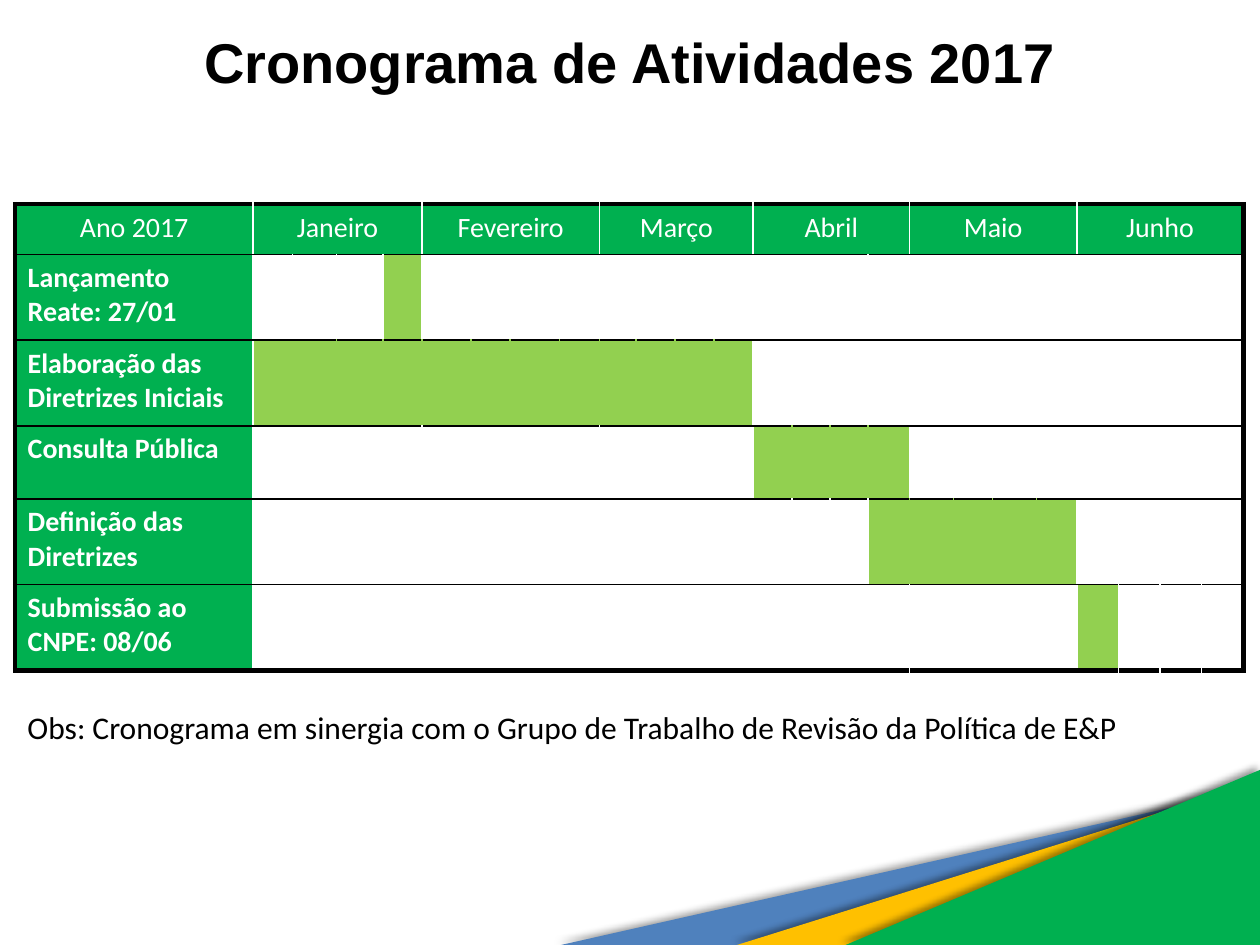
from lxml import etree
from pptx import Presentation
from pptx import util as u
from pptx.dml.color import RGBColor
from pptx.enum import shapes, text
from pptx.oxml.ns import qn

GREEN = RGBColor(0x00, 0xB0, 0x50)
LIME = RGBColor(0x92, 0xD0, 0x50)
BLUE = RGBColor(0x4F, 0x81, 0xBD)
GOLD = RGBColor(0xFF, 0xC0, 0x00)
BLACK = RGBColor(0, 0, 0)
WHITE = RGBColor(0xFF, 0xFF, 0xFF)

UNIT = 0.1  # inches per grid step: 100 columns by 75 rows
WEEKS = 4
LAST = 24
MONTHS = ["Janeiro", "Fevereiro", "Março", "Abril", "Maio", "Junho"]
# label, first and last week of the bar
TASKS = [
    ("Lançamento Reate: 27/01", 4, 4),
    ("Elaboração das Diretrizes Iniciais", 1, 12),
    ("Consulta Pública", 13, 16),
    ("Definição das Diretrizes", 16, 20),
    ("Submissão ao CNPE: 08/06", 21, 21),
]
# (row, first week): weeks joined where the month is not one whole cell
JOINS = {(1, 13): 3, (2, 1): 2, (2, 13): 3, (5, 13): 3}
COLS = [18.9, 3.1, 3.5, 3.7, 3.1, 3.9, 3.1, 3.9, 3.2, 2.9, 3.1, 3.1, 3.1,
        3.1, 3, 3, 3.3, 3.5, 3.1, 3.5, 3.2, 3.3, 3.3, 3.3, 3.3]
ROWS = [4, 6.8, 6.8, 5.8, 6.8, 6.8]


def grid(n):
    return u.Inches(n * UNIT)


class Deck:
    base = dict(name="Calibri", size=u.Pt(16), bold=False)

    def __init__(self):
        self.prs = Presentation()
        self.prs.slide_width, self.prs.slide_height = grid(100), grid(75)
        self.slide = self.prs.slides.add_slide(self.prs.slide_layouts[6])

    def put(self, frame, words, color, align=text.PP_ALIGN.LEFT, **style):
        para = frame.paragraphs[0]
        para.alignment = align
        run = para.add_run()
        run.text = words
        for key, val in {**self.base, **style}.items():
            setattr(run.font, key, val)
        run.font.color.rgb = color

    def label(self, box, words, anchor=text.MSO_ANCHOR.TOP, **style):
        frame = self.slide.shapes.add_textbox(*map(grid, box)).text_frame
        frame.word_wrap = True
        frame.vertical_anchor = anchor
        self.put(frame, words, BLACK, **style)

    def wedge(self, left, top, color):
        """Right triangle reaching the bottom right corner, with soft shadow."""
        box = map(grid, (left, top, 100 - left, 75 - top))
        shape = self.slide.shapes.add_shape(
            shapes.MSO_SHAPE.RIGHT_TRIANGLE, *box)
        shape.rotation = 180
        shape.fill.solid()
        shape.fill.fore_color.rgb = color
        shape.line.fill.background()
        shape.shadow.inherit = False
        props = shape._element.spPr
        props.find(qn("a:xfrm")).set("flipV", "1")
        shade = etree.SubElement(
            props.find(qn("a:effectLst")), qn("a:outerShdw"),
            blurRad=str(u.Pt(4)), dist=str(u.Pt(3)), dir=str(225 * 60000),
            algn="br", rotWithShape="0")
        tint = etree.SubElement(shade, qn("a:srgbClr"), val=str(BLACK))
        etree.SubElement(tint, qn("a:alpha"), val="40000")

    def edges(self, cell, lines):
        """Borders as side: (colour, points), in order L, R, T, B."""
        props = cell._tc.get_or_add_tcPr()
        for i, (side, (color, width)) in enumerate(lines.items()):
            line = etree.Element(qn("a:ln" + side), w=str(u.Pt(width)))
            fill = etree.SubElement(line, qn("a:solidFill"))
            etree.SubElement(fill, qn("a:srgbClr"), val=str(color))
            props.insert(i, line)

    def table(self, left, top):
        size = (left, top, sum(COLS), sum(ROWS))
        table = self.slide.shapes.add_table(
            len(ROWS), len(COLS), *map(grid, size)).table
        table.first_row = table.horz_banding = False
        for col, width in zip(table.columns, COLS):
            col.width = grid(width)
        for row, height in zip(table.rows, ROWS):
            row.height = grid(height)
        return table

    def paint(self, cell, color):
        if color is None:
            cell.fill.background()
        else:
            cell.fill.solid()
            cell.fill.fore_color.rgb = color


def ends(row, bar):
    """Last column of the merged cell that starts at each column."""
    last = {c: c for c in range(LAST + 1)}
    for first in range(1, LAST, WEEKS):
        busy = any(c in bar for c in range(first, first + WEEKS))
        count = JOINS.get((row, first), 1 if busy else WEEKS)
        last[first] = first + count - 1
    return last


def plan(deck):
    table = deck.table(1.2, 16.2)
    bars = [range(0)] + [range(a, b + 1) for _, a, b in TASKS]
    thick, thin, plain, inner = (BLACK, 3), (BLACK, 1), (WHITE, 1), (LIME, 1)
    for r, bar in enumerate(bars):
        for c, end in ends(r, bar).items():
            cell = table.cell(r, c)
            if end > c:
                cell.merge(table.cell(r, end))
            # frame, bar seams and grid lines
            deck.edges(cell, {
                "L": thick if c == 0 else
                inner if c in bar and c - 1 in bar else plain,
                "R": thick if end == LAST else
                inner if end in bar and end + 1 in bar else plain,
                "T": thick if r == 0 else thin,
                "B": thick if r == len(TASKS) else thin,
            })
            head = r == 0 or c == 0
            deck.paint(cell, GREEN if head else LIME if c in bar else None)
    # headings and task names
    mid = text.PP_ALIGN.CENTER
    deck.put(table.cell(0, 0).text_frame, "Ano 2017", WHITE, mid)
    for i, name in enumerate(MONTHS):
        deck.put(table.cell(0, 1 + i * WEEKS).text_frame, name, WHITE, mid)
    for r, (name, _, _) in enumerate(TASKS, 1):
        deck.put(table.cell(r, 0).text_frame, name, WHITE, bold=True)


def main():
    deck = Deck()
    # corner ribbons
    for left, top, color in [(44.5, 62.5, BLUE), (58.5, 62, GOLD),
                             (67.1, 61.1, GREEN)]:
        deck.wedge(left, top, color)
    # schedule
    plan(deck)
    # title and note
    deck.label((0, 0.2, 100, 9.3), "Cronograma de Atividades 2017",
               text.MSO_ANCHOR.MIDDLE, align=text.PP_ALIGN.CENTER,
               name="Arial", size=u.Pt(32), bold=True)
    deck.label((1.2, 55.7, 97.6, 4),
               "Obs: Cronograma em sinergia com o Grupo de Trabalho de "
               "Revisão da Política de E&P", size=u.Pt(18))
    deck.prs.save("out.pptx")


if __name__ == "__main__":
    main()
